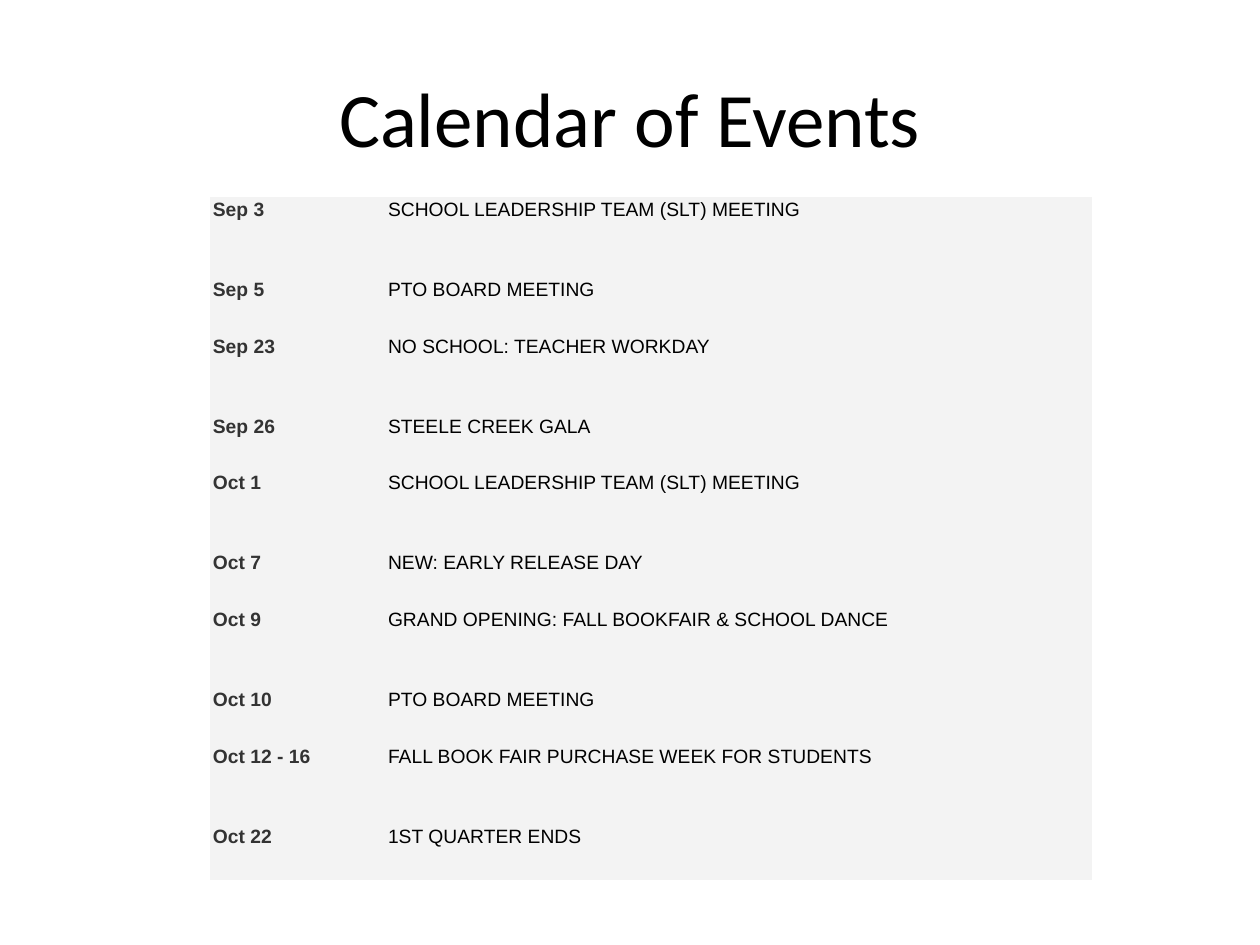
from pptx import Presentation
from pptx import util as u
from pptx.dml import color
from pptx.enum import text
from pptx.oxml import ns

COLORS = {"title": "000000", "date": "333333", "event": "000000", "cell": "F3F3F3"}
NO_GRID_STYLE = "{2D5ABB26-0587-4C30-8999-92F81FD0307C}"
COLUMN_WIDTHS = (1.39, 5.61)
ROW_HEIGHTS = (0.635, 0.45)
EVENTS = [
    ("Sep 3", "SCHOOL LEADERSHIP TEAM (SLT) MEETING"),
    ("Sep 5", "PTO BOARD MEETING"),
    ("Sep 23", "NO SCHOOL: TEACHER WORKDAY"),
    ("Sep 26", "STEELE CREEK GALA"),
    ("Oct 1", "SCHOOL LEADERSHIP TEAM (SLT) MEETING"),
    ("Oct 7", "NEW: EARLY RELEASE DAY"),
    ("Oct 9", "GRAND OPENING: FALL BOOKFAIR & SCHOOL DANCE"),
    ("Oct 10", "PTO BOARD MEETING"),
    ("Oct 12 - 16", "FALL BOOK FAIR PURCHASE WEEK FOR STUDENTS"),
    ("Oct 22", "1ST QUARTER ENDS"),
]


def rgb(name):
    return color.RGBColor.from_string(COLORS[name])


def format_font(paragraph, family, size, role, bold=False):
    for run in paragraph.runs:
        run.font.name = family
        run.font.size = u.Pt(size)
        run.font.bold = bold
        run.font.color.rgb = rgb(role)


def add_title(slide, wording):
    title = slide.shapes.add_textbox(u.Inches(0.5), u.Inches(0.3), u.Inches(9), u.Inches(1.25))
    frame = title.text_frame
    frame.word_wrap = True
    frame.vertical_anchor = text.MSO_ANCHOR.MIDDLE
    frame.text = wording
    heading = frame.paragraphs[0]
    heading.alignment = text.PP_ALIGN.CENTER
    format_font(heading, "Calibri", 44, "title")


def fill_cell(cell, wording, role):
    cell.margin_left = cell.margin_right = u.Inches(0.02)
    cell.margin_top = cell.margin_bottom = u.Inches(0.02)
    cell.fill.solid()
    cell.fill.fore_color.rgb = rgb("cell")
    cell.text_frame.text = wording
    format_font(cell.text_frame.paragraphs[0], "Arial", 11, role, bold=role == "date")


def add_calendar(slide, events):
    frame = slide.shapes.add_table(len(events), len(COLUMN_WIDTHS), u.Inches(1.67),
                                   u.Inches(1.56), u.Inches(7), u.Inches(5.42))
    calendar = frame.table
    calendar.first_row = False
    calendar.horz_banding = False
    frame._element.find(".//" + ns.qn("a:tableStyleId")).text = NO_GRID_STYLE
    for column, width in zip(calendar.columns, COLUMN_WIDTHS):
        column.width = u.Inches(width)
    for index, (date, event) in enumerate(events):
        calendar.rows[index].height = u.Inches(ROW_HEIGHTS[index % 2])
        fill_cell(calendar.cell(index, 0), date, "date")
        fill_cell(calendar.cell(index, 1), event, "event")


def main():
    deck = Presentation()
    deck.slide_width = u.Inches(10)
    deck.slide_height = u.Inches(7.5)
    slide = deck.slides.add_slide(deck.slide_layouts[6])
    add_title(slide, "Calendar of Events")
    add_calendar(slide, EVENTS)
    deck.save("out.pptx")


if __name__ == "__main__":
    main()
